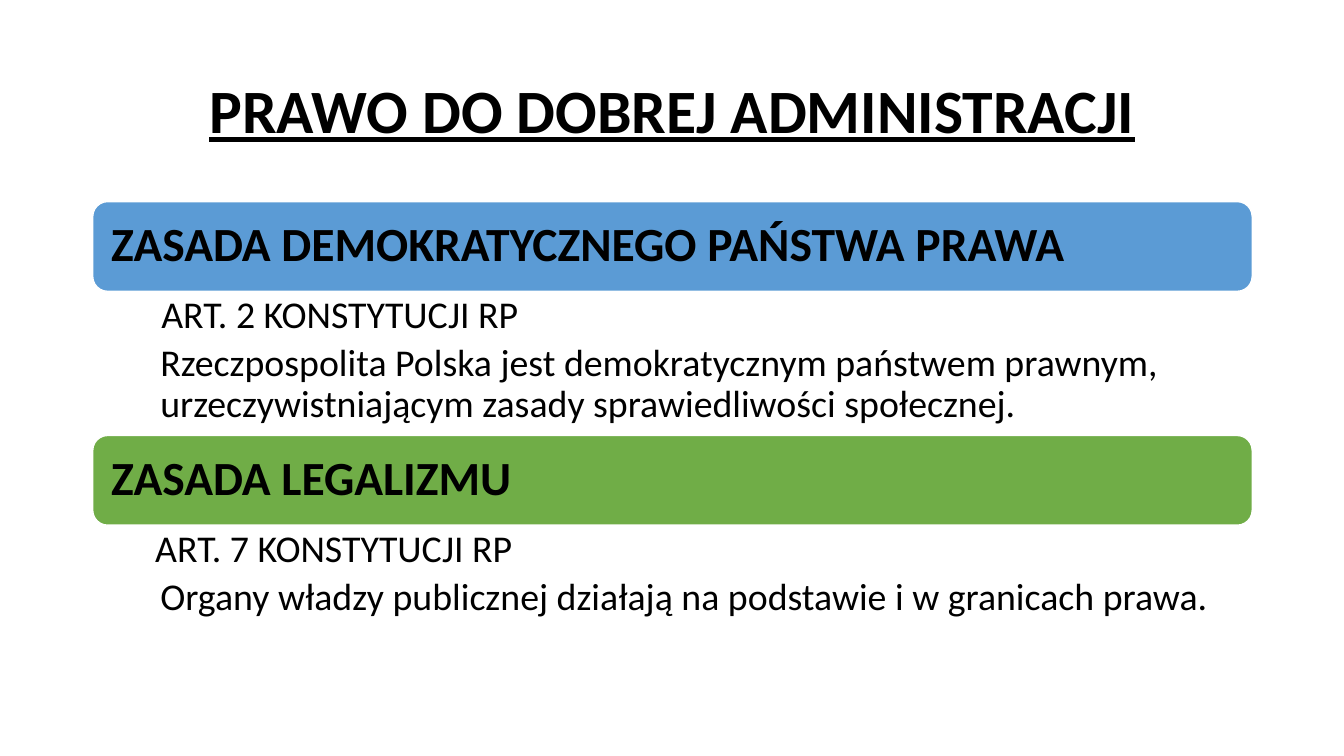
from pptx import Presentation
from pptx.dml.color import RGBColor
from pptx.enum.shapes import MSO_SHAPE
from pptx.enum.text import MSO_ANCHOR, MSO_AUTO_SIZE, PP_ALIGN
from pptx.util import Pt

PX = 9144
ROUNDED = MSO_SHAPE.ROUNDED_RECTANGLE
TOP, MIDDLE = MSO_ANCHOR.TOP, MSO_ANCHOR.MIDDLE
LEFT, CENTER = PP_ALIGN.LEFT, PP_ALIGN.CENTER
NO_FIT = MSO_AUTO_SIZE.NONE
COLORS = {"text": "000000", "line": "FFFFFF", "blue": "5B9BD5", "green": "70AD47"}

MARGIN, WIDTH = 92, 1150
BAR_HEIGHT = 89
SECTIONS = [
    (200, 142, "blue", "ZASADA DEMOKRATYCZNEGO PAŃSTWA PRAWA", [
        (31, "ART. 2 KONSTYTUCJI RP"),
        (30, "Rzeczpospolita Polska jest demokratycznym państwem prawnym, "
             "urzeczywistniającym zasady sprawiedliwości społecznej."),
    ]),
    (432, 154, "green", "ZASADA LEGALIZMU", [
        (25, "ART. 7 KONSTYTUCJI RP"),
        (30, "Organy władzy publicznej działają na podstawie i w granicach prawa."),
    ]),
]


def set_frame(frame, anchor, left, top, right, bottom):
    values = {
        "word_wrap": True, "auto_size": NO_FIT, "vertical_anchor": anchor,
        "margin_left": left * PX, "margin_top": top * PX,
        "margin_right": right * PX, "margin_bottom": bottom * PX,
    }
    for name, value in values.items():
        setattr(frame, name, value)


def write(para, text, size, align=LEFT, after=0, **style):
    para.alignment = align
    para.line_spacing = 0.9
    para.space_before = Pt(0)
    para.space_after = Pt(after)
    span = para.add_run()
    span.text = text
    span.font.color.rgb = RGBColor.from_string(COLORS["text"])
    for name, value in {"name": "Calibri", "size": Pt(size), **style}.items():
        setattr(span.font, name, value)


deck = Presentation()
deck.slide_width, deck.slide_height = 1333 * PX, 750 * PX
page = deck.slides.add_slide(deck.slide_layouts[5])

title = page.shapes.title
title_place = {"left": MARGIN, "top": 40, "width": WIDTH, "height": 145}
for name, value in title_place.items():
    setattr(title, name, value * PX)
set_frame(title.text_frame, MIDDLE, 10, 5, 10, 5)
write(title.text_frame.paragraphs[0], "PRAWO DO DOBREJ ADMINISTRACJI", 44,
      CENTER, bold=True, underline=True)

for top, body_height, color, heading, lines in SECTIONS:
    bar = page.shapes.add_shape(ROUNDED, MARGIN * PX, top * PX, WIDTH * PX, BAR_HEIGHT * PX)
    bar.shadow.inherit = False
    bar.fill.solid()
    bar.fill.fore_color.rgb = RGBColor.from_string(COLORS[color])
    bar.line.color.rgb = RGBColor.from_string(COLORS["line"])
    bar.line.width = Pt(1)
    set_frame(bar.text_frame, MIDDLE, 14, 14, 14, 14)
    write(bar.text_frame.paragraphs[0], heading, 34, bold=True)

    body = page.shapes.add_textbox(MARGIN * PX, (top + BAR_HEIGHT) * PX,
                                   WIDTH * PX, body_height * PX)
    frame = body.text_frame
    set_frame(frame, TOP, 37, 5, 26, 5)
    for index, (indent, text) in enumerate(lines):
        para = frame.add_paragraph() if index else frame.paragraphs[0]
        para.level = 1
        properties = para._p.get_or_add_pPr()
        properties.set("marL", str(indent * PX))
        properties.set("indent", "0")
        write(para, text, 27, after=5)

deck.save("out.pptx")
